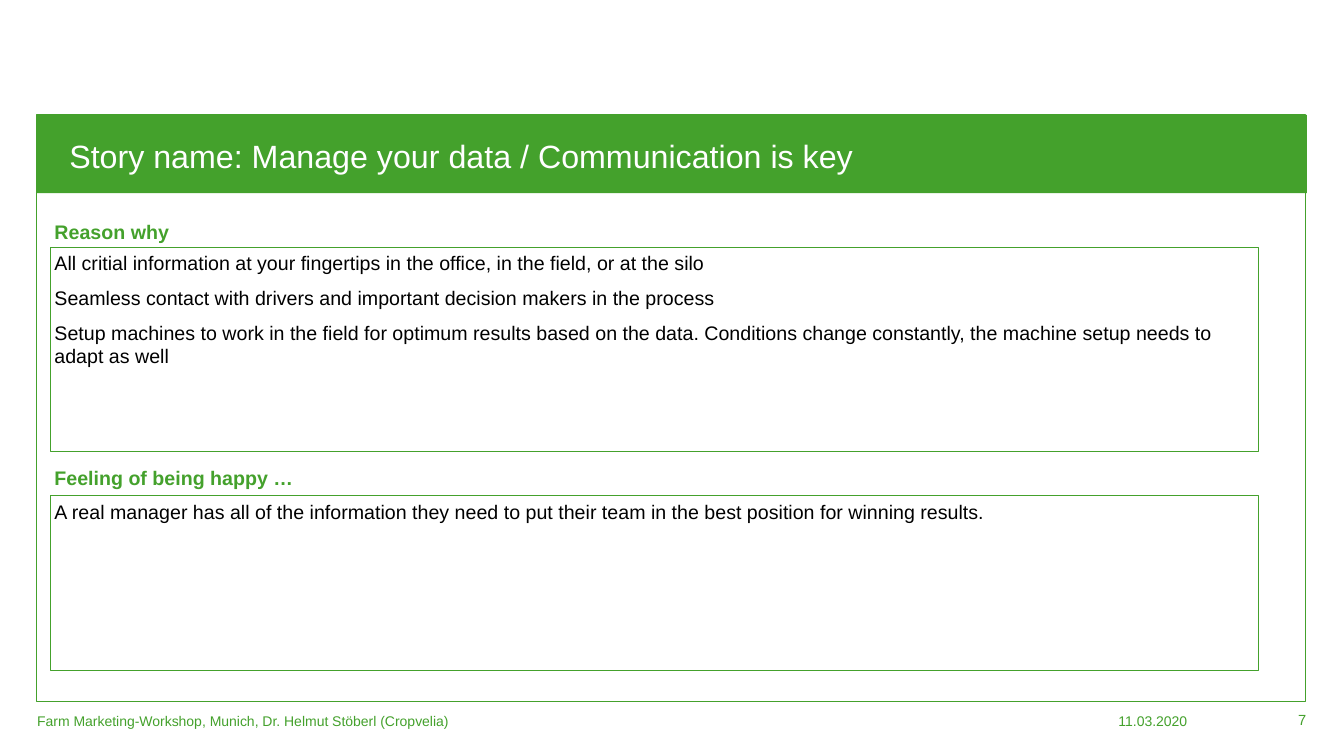
import lxml.etree
import pptx
import pptx.dml.color
import pptx.enum.shapes
import pptx.enum.text
import pptx.oxml.ns
import pptx.util

Pt = pptx.util.Pt
ALIGN = pptx.enum.text.PP_ALIGN
ANCHOR = pptx.enum.text.MSO_ANCHOR
GREEN, WHITE, BLACK = "44A12C", "FFFFFF", "000000"


def color(value):
    """Turn a hex string into a colour."""
    return pptx.dml.color.RGBColor.from_string(value)


def write(sp, lines, size, ink, bold=False, align=ALIGN.LEFT, anchor=ANCHOR.TOP, inset=0, gap=0, spacing=1):
    """Fill a shape with formatted, unbulleted paragraphs."""
    tf = sp.text_frame
    tf.text = "\n".join(lines)
    tf.word_wrap = True
    tf.auto_size = pptx.enum.text.MSO_AUTO_SIZE.NONE
    tf.vertical_anchor = anchor
    tf.margin_left = tf.margin_right = tf.margin_top = tf.margin_bottom = Pt(inset)
    for i, p in enumerate(tf.paragraphs):
        pPr = p._p.get_or_add_pPr()
        pPr.set("marL", "0")
        pPr.set("indent", "0")
        lxml.etree.SubElement(pPr, pptx.oxml.ns.qn("a:buNone"))
        p.alignment = align
        p.line_spacing = spacing
        p.space_before = Pt(gap if i else 0)
        for r in p.runs:
            r.font.name, r.font.size, r.font.bold = "Arial", Pt(size), bold
            r.font.color.rgb = color(ink)


def place(sp, x, y, w, h):
    """Move a placeholder to a box and bring it to the front."""
    sp.left, sp.top, sp.width, sp.height = Pt(x), Pt(y), Pt(w), Pt(h)
    sp.element.getparent().append(sp.element)


def add_panel(s, x, y, w, h, fill):
    """Add a green-outlined rectangle."""
    sp = s.shapes.add_shape(pptx.enum.shapes.MSO_SHAPE.RECTANGLE, Pt(x), Pt(y), Pt(w), Pt(h))
    sp.shadow.inherit = False
    sp.fill.solid()
    sp.fill.fore_color.rgb = color(fill)
    sp.line.color.rgb = color(GREEN)
    sp.line.width = Pt(1)
    return sp


def add_header(s, title, x, y, w, h):
    """Add the green bar and the slide title on it."""
    add_panel(s, x, y, w, h, GREEN).line.fill.background()
    place(s.shapes.title, x + 23, y + 6, 652, h - 6)
    write(s.shapes.title, [title], 23, WHITE, anchor=ANCHOR.MIDDLE, spacing=0.9)


def add_section(head, body, heading, lines, x, y, w, h, head_h):
    """Place a heading above an outlined body box."""
    place(head, x, y, 200, 23)
    write(head, [heading], 14, GREEN, bold=True, inset=2.9)
    place(body, x, y + head_h, w, h - head_h)
    body.line.color.rgb = color(GREEN)
    body.line.width = Pt(0.75)
    write(body, lines, 14, BLACK, inset=2.9, gap=8)


def add_footer(s, x, y, w, h):
    """Add the event, date and slide number along the bottom."""
    for text, left, top, width, size, align in (
        ("Farm Marketing-Workshop, Munich, Dr. Helmut Stöberl (Cropvelia)", x, y, 600, 10, ALIGN.LEFT),
        ("11.03.2020", x + w - 362, y, 277, 10, ALIGN.RIGHT),
        ("7", x + w - 75, y - 0.5, 75, 10.5, ALIGN.RIGHT),
    ):
        sp = s.shapes.add_textbox(Pt(left), Pt(top), Pt(width), Pt(h))
        write(sp, [text], size, GREEN, align=align, anchor=ANCHOR.MIDDLE)


def main():
    """Build and save the story slide."""
    prs = pptx.Presentation()
    prs.slide_width, prs.slide_height = Pt(960), Pt(540)
    s = prs.slides.add_slide(prs.slide_layouts.get_by_name("Comparison"))
    ph = {sp.placeholder_format.idx: sp for sp in s.placeholders}
    add_panel(s, 26, 82, 906.5, 419, WHITE)
    add_header(s, "Story name: Manage your data / Communication is key", 26.5, 82, 907, 56)
    add_section(ph[1], ph[2], "Reason why", [
        "All critial information at your fingertips in the office, in the field, or at the silo",
        "Seamless contact with drivers and important decision makers in the process",
        "Setup machines to work in the field for optimum results based on the data. "
        "Conditions change constantly, the machine setup needs to adapt as well",
    ], 36, 154, 863, 168.5, 22.5)
    add_section(ph[3], ph[4], "Feeling of being happy …", [
        "A real manager has all of the information they need to put their team "
        "in the best position for winning results.",
    ], 36, 330, 863, 149, 24)
    add_footer(s, 26.5, 508.5, 906.5, 12.5)
    prs.save("out.pptx")


if __name__ == "__main__":
    main()
